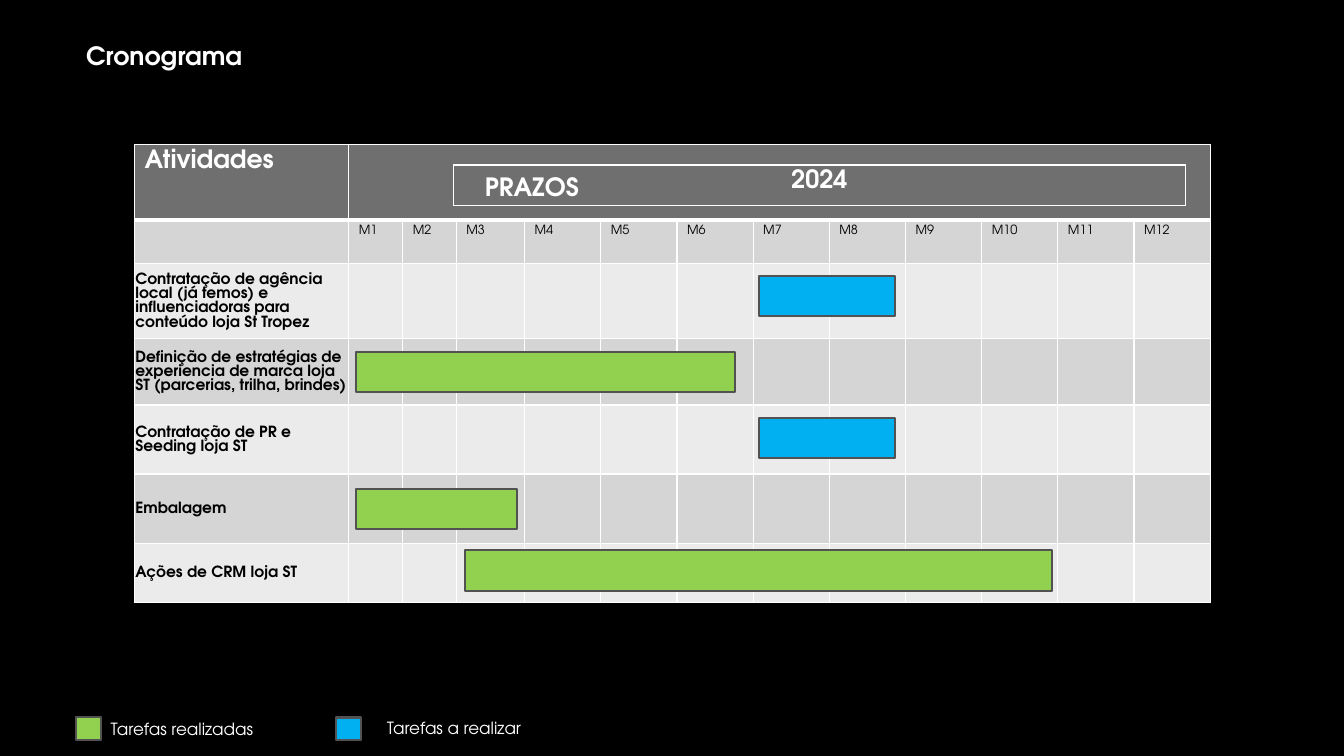
from typing import NamedTuple

from lxml.etree import SubElement
from pptx import Presentation
from pptx.dml.color import RGBColor
from pptx.enum.shapes import MSO_SHAPE as Shape
from pptx.enum.text import MSO_ANCHOR as Anchor, MSO_AUTO_SIZE as Fit, PP_ALIGN as Align
from pptx.oxml.ns import qn
from pptx.util import Cm, Pt

FONT = "TeX Gyre Adventor"
WHITE, BLACK = "FFFFFF", "000000"
DONE, TODO = "92D050", "00B0F0"
HEAD, DARK, LIGHT = "6F6F6F", "D5D5D5", "EBEBEB"
BAR_H = 1.02

TASKS = [
    "Contratação de agência local (já temos) e influenciadoras para conteúdo loja St Tropez",
    "Definição de estratégias de experiencia de marca loja ST (parcerias, trilha, brindes)",
    "Contratação de PR e Seeding loja ST",
    "Embalagem",
    "Ações de CRM loja ST",
]
COLS = [5.4, 1.36, 1.35, 1.72] + [1.92] * 9
ROWS = [1.9, 1.1, 1.88, 1.68, 1.74, 1.76, 1.48]


class Box(NamedTuple):
    x: float
    y: float
    w: float
    h: float
    fill: str


class Label(NamedTuple):
    x: float
    y: float
    w: float
    h: float
    text: str
    size: int
    bold: bool


KEYS = [Box(1.91, 18.06, 0.64, 0.58, DONE), Box(8.46, 18.08, 0.64, 0.58, TODO)]
BARS = [
    Box(8.97, 8.86, 9.55, BAR_H, DONE),
    Box(19.13, 6.95, 3.43, BAR_H, TODO),
    Box(11.71, 13.87, 14.81, BAR_H, DONE),
    Box(8.97, 12.32, 4.06, BAR_H, DONE),
    Box(19.13, 10.53, 3.43, BAR_H, TODO),
]
LABELS = [
    Label(1.92, 0.89, 23.29, 1.02, "Cronograma", 18, True),
    Label(2.54, 17.98, 5.51, 0.76, "Tarefas realizadas", 12, False),
    Label(9.5, 17.96, 5.51, 0.76, "Tarefas a realizar", 12, False),
]
DUE = Label(11.97, 4.19, 7.14, 1.02, "PRAZOS", 18, True)


def color(code: str) -> RGBColor:
    return RGBColor.from_string(code)


def write(frame, text: str, *, size: int = 18, bold: bool = False, ink: str = WHITE,
          align=Align.LEFT) -> None:
    para = frame.paragraphs[0]
    para.alignment = align
    run = para.add_run()
    run.text = text
    font = run.font
    font.name, font.size, font.bold = FONT, Pt(size), bold
    font.color.rgb = color(ink)


def add_label(slide, label: Label) -> None:
    box = slide.shapes.add_textbox(Cm(label.x), Cm(label.y), Cm(label.w), Cm(label.h))
    frame = box.text_frame
    frame.word_wrap = True
    frame.auto_size = Fit.SHAPE_TO_FIT_TEXT
    write(frame, label.text, size=label.size, bold=label.bold)


def add_box(slide, box: Box) -> None:
    rect = slide.shapes.add_shape(Shape.RECTANGLE, Cm(box.x), Cm(box.y), Cm(box.w), Cm(box.h))
    rect.shadow.inherit = False
    rect.fill.solid()
    rect.fill.fore_color.rgb = color(box.fill)
    rect.line.color.rgb = color("525252")
    rect.line.width = Pt(1.5)


def edge(cell, **widths: float) -> None:
    """Draw white cell borders; widths in points override 1 pt by side."""
    props = cell._tc.get_or_add_tcPr()
    for side in "LRTB":
        line = SubElement(props, qn(f"a:ln{side}"), w=str(Pt(widths.get(side, 1))))
        fill = SubElement(line, qn("a:solidFill"))
        SubElement(fill, qn("a:srgbClr"), val=WHITE)


def add_grid(slide, x: float, y: float, cols: list[float], rows: list[float]):
    frame = slide.shapes.add_table(len(rows), len(cols), Cm(x), Cm(y), Cm(sum(cols)), Cm(sum(rows)))
    grid = frame.table
    grid.first_row = grid.horz_banding = False
    for col, width in zip(grid.columns, cols):
        col.width = Cm(width)
    for row, height in zip(grid.rows, rows):
        row.height = Cm(height)
    return grid


def add_plan(slide) -> None:
    grid = add_grid(slide, 3.39, 3.64, COLS, ROWS)
    for r, row in enumerate(grid.rows):
        shade = HEAD if r == 0 else DARK if r % 2 else LIGHT
        for cell in row.cells:
            edge(cell, **({"B": 3} if r == 0 else {"T": 3} if r == 1 else {}))
            cell.fill.solid()
            cell.fill.fore_color.rgb = color(shade)
    grid.cell(0, 1).merge(grid.cell(0, len(COLS) - 1))
    write(grid.cell(0, 0).text_frame, "Atividades", bold=True)
    for m in range(1, len(COLS)):
        write(grid.cell(1, m).text_frame, f"M{m}", size=9, ink=BLACK)
    for r, task in enumerate(TASKS, 2):
        cell = grid.cell(r, 0)
        cell.vertical_anchor = Anchor.MIDDLE
        cell.margin_left = cell.margin_right = cell.margin_top = Cm(0.02)
        cell.margin_bottom = 0
        write(cell.text_frame, task, size=11, bold=True, ink=BLACK)


def add_year(slide) -> None:
    cell = add_grid(slide, 11.43, 4.16, [18.44], [1.02]).cell(0, 0)
    edge(cell)
    cell.fill.background()
    write(cell.text_frame, "2024", bold=True, align=Align.CENTER)


def main() -> None:
    deck = Presentation()
    deck.slide_width, deck.slide_height = Cm(33.87), Cm(19.05)
    slide = deck.slides.add_slide(deck.slide_layouts[6])
    slide.background.fill.solid()
    slide.background.fill.fore_color.rgb = color(BLACK)
    for label in LABELS:
        add_label(slide, label)
    add_plan(slide)
    add_label(slide, DUE)
    add_year(slide)
    for box in KEYS + BARS:
        add_box(slide, box)
    deck.save("out.pptx")


if __name__ == "__main__":
    main()
